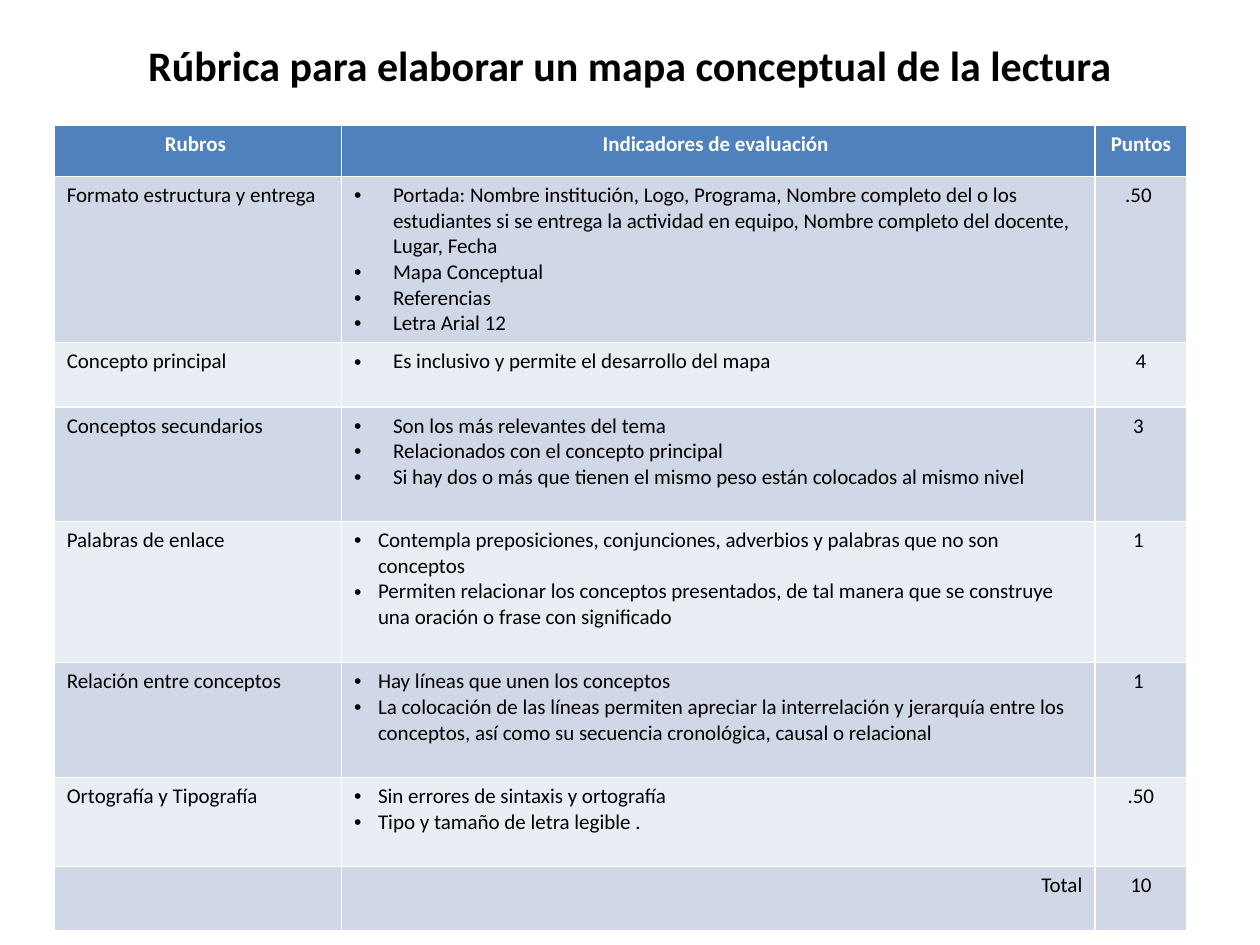
from lxml.etree import SubElement
from pptx import Presentation
from pptx.dml.color import RGBColor
from pptx.enum.text import MSO_ANCHOR, PP_ALIGN
from pptx.oxml.ns import qn
from pptx.util import Inches, Pt


def color(value):
    return RGBColor.from_string(value)


def write_text(frame, *lines, size=12, ink="000000", bold=False,
               align=PP_ALIGN.LEFT, indent=0):
    """Write one paragraph per line; an indent in inches makes them bulleted."""
    for number, line in enumerate(lines):
        paragraph = frame.add_paragraph() if number else frame.paragraphs[0]
        paragraph.alignment = align
        run = paragraph.add_run()
        run.text = line
        run.font.name = "Calibri"
        run.font.size = Pt(size)
        run.font.bold = bold
        run.font.color.rgb = color(ink)
        if indent:
            properties = paragraph._p.get_or_add_pPr()
            properties.set("marL", str(Inches(indent)))
            properties.set("indent", str(-Inches(indent)))
            SubElement(properties, qn("a:buFont"), typeface="Arial")
            SubElement(properties, qn("a:buChar"), char="•")


HEADERS = ["Rubros ", "Indicadores de evaluación ", "Puntos"]
COLUMN_WIDTHS = [2.28, 5.98, 0.73]
HEADER_HEIGHT = 0.41
# Height, criterion, bullet indent, indicators, points
CRITERIA = [
    (1.32, "Formato estructura y entrega", 0.31, [
        "Portada: Nombre institución, Logo, Programa, Nombre completo del o los "
        "estudiantes si se entrega la actividad en equipo, Nombre completo del "
        "docente, Lugar, Fecha",
        "Mapa Conceptual",
        "Referencias",
        "Letra Arial 12"], ".50 "),
    (0.51, "Concepto principal", 0.31, [
        "Es inclusivo y permite el desarrollo del mapa"], "4"),
    (0.91, "Conceptos secundarios", 0.31, [
        "Son los más relevantes del tema",
        "Relacionados con el concepto principal",
        "Si hay dos o más que tienen el mismo peso están colocados al mismo nivel"],
     "3 "),
    (1.12, "Palabras de enlace", 0.19, [
        "Contempla preposiciones, conjunciones, adverbios y palabras que no son "
        "conceptos",
        "Permiten relacionar los conceptos presentados, de tal manera que se "
        "construye una oración o frase con significado"], "1 "),
    (0.91, "Relación entre conceptos", 0.19, [
        "Hay líneas que unen los conceptos",
        "La colocación de las líneas permiten apreciar la interrelación y jerarquía "
        "entre los conceptos, así como su secuencia cronológica, causal o relacional"],
     "1 "),
    (0.71, "Ortografía y Tipografía", 0.19, [
        "Sin errores de sintaxis y ortografía",
        "Tipo y tamaño de letra legible ."], ".50"),
    (0.51, "", 0, ["Total"], "10"),
]

presentation = Presentation()
presentation.slide_width = Inches(10)
presentation.slide_height = Inches(7.5)
slide = presentation.slides.add_slide(presentation.slide_layouts[5])

title = slide.shapes.title
title.left, title.top = Inches(0.5), Inches(-0.11)
title.width, title.height = Inches(9), Inches(1.25)
title.text_frame.vertical_anchor = MSO_ANCHOR.MIDDLE
write_text(title.text_frame, "Rúbrica para elaborar un mapa conceptual de la lectura",
           size=24, bold=True, align=PP_ALIGN.CENTER)

heights = [HEADER_HEIGHT] + [criterion[0] for criterion in CRITERIA]
# The default table style supplies the white cell borders.
table = slide.shapes.add_table(
    len(heights), len(HEADERS), Inches(0.43), Inches(0.99),
    Inches(sum(COLUMN_WIDTHS)), Inches(sum(heights))).table
for column, width in zip(table.columns, COLUMN_WIDTHS):
    column.width = Inches(width)

for index, (row, height) in enumerate(zip(table.rows, heights)):
    row.height = Inches(height)
    band = "D0D8E8" if index % 2 else "E9EDF4"
    for cell in row.cells:
        cell.fill.solid()
        cell.fill.fore_color.rgb = color(band if index else "4F81BD")

for column, header in enumerate(HEADERS):
    write_text(table.cell(0, column).text_frame, header,
               ink="FFFFFF", bold=True, align=PP_ALIGN.CENTER)

for row, (_, criterion, indent, indicators, points) in enumerate(CRITERIA, start=1):
    if criterion:
        write_text(table.cell(row, 0).text_frame, criterion)
    write_text(table.cell(row, 1).text_frame, *indicators, indent=indent,
               align=PP_ALIGN.LEFT if indent else PP_ALIGN.RIGHT)
    write_text(table.cell(row, 2).text_frame, points, align=PP_ALIGN.CENTER)

presentation.save("out.pptx")
